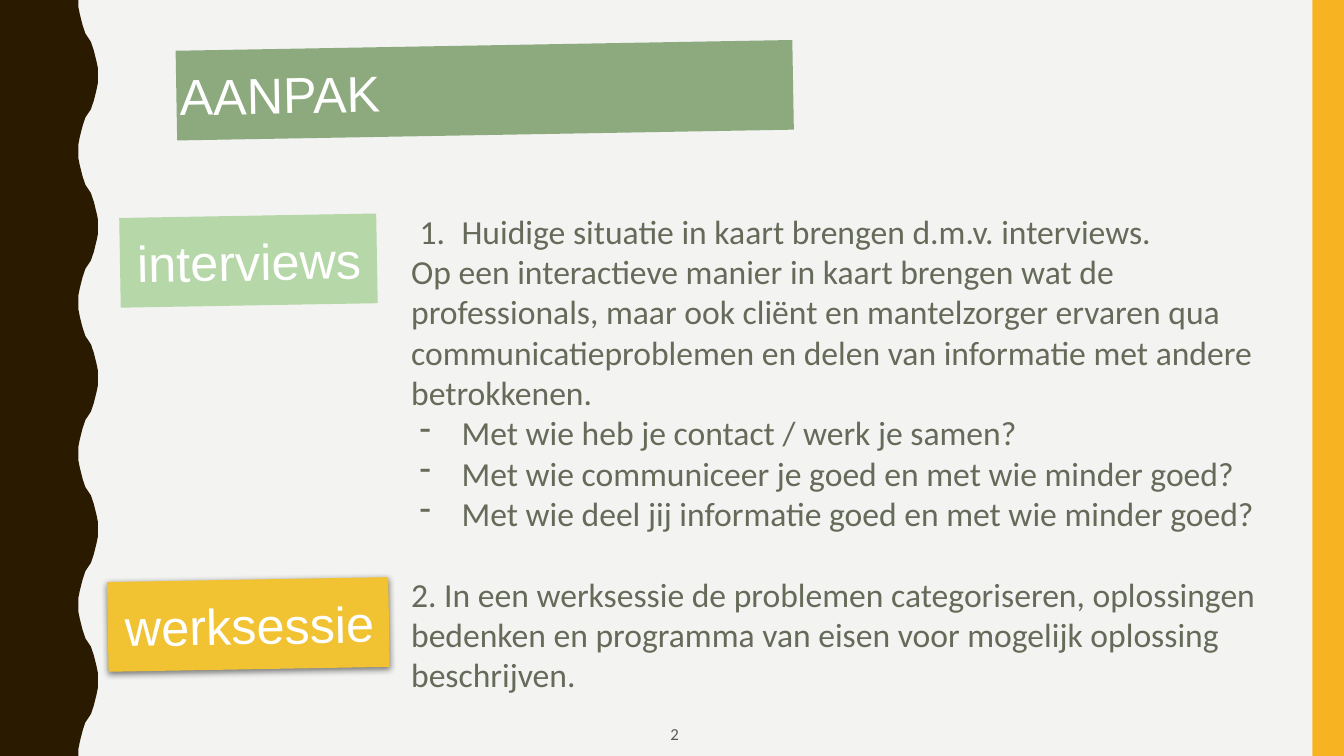
"""Build the AANPAK slide with its interview and work session steps."""
from pptx import Presentation
from pptx.dml.color import RGBColor as Rgb
from pptx.enum.shapes import MSO_SHAPE as Shape
from pptx.enum.text import MSO_ANCHOR as Anchor, PP_ALIGN as Align
from pptx.oxml import parse_xml
from pptx.oxml.ns import nsdecls
from pptx.util import Pt

TITLE = "AANPAK"
PAGE_NUMBER = "2"
STEPS = [
    ("number", "Huidige situatie in kaart brengen d.m.v. interviews."),
    ("plain", "Op een interactieve manier in kaart brengen wat de professionals, maar ook "
              "cliënt en mantelzorger ervaren qua communicatieproblemen en delen van "
              "informatie met andere betrokkenen."),
    ("dash", "Met wie heb je contact / werk je samen?"),
    ("dash", "Met wie communiceer je goed en met wie minder goed?"),
    ("dash", "Met wie deel jij informatie goed en met wie minder goed?"),
    ("section", "2. In een werksessie de problemen categoriseren, oplossingen bedenken en "
                "programma van eisen voor mogelijk oplossing beschrijven."),
]
THEME = {
    "paper": "F3F3F2", "wave": "2A1A00", "edge": "F8B323", "title": "8CAA7E",
    "interviews": "B6D7A8", "werksessie": "F1C232", "label": "FFFFFF",
    "body": "656A59", "number": "595959",
    "label_font": "Arial", "body_font": "Calibri",
    "label_size": 36, "body_size": 24, "number_size": 12,
}
LABELS = [
    (TITLE, "title", (126, 32.4, 440.6, 64.1), False),
    (" interviews", "interviews", (85.7, 154.1, 183.6, 64.1), False),
    (" werksessie", "werksessie", (77, 414, 200.9, 64.1), True),
]
BULLETS = {
    "number": '<a:buAutoNum {} type="arabicPeriod"/>',
    "dash": '<a:buChar {} char="-"/>',
}
SHADOW = ('<a:effectLst {}><a:outerShdw blurRad="57150" dist="19050" dir="5400000" '
          'algn="bl" rotWithShape="0"><a:srgbClr val="000000"><a:alpha val="50000"/>'
          '</a:srgbClr></a:outerShdw></a:effectLst>')
SLIDE_WIDTH, SLIDE_HEIGHT = 960, 540
WAVE_PERIOD, WAVE_COUNT = 108, 5
WAVE_LEFT, WAVE_RIGHT = 56, 70
WAVE_RISE = [(56, 0), (56.3, 5), (57, 10), (57.7, 14.4), (58.6, 18),
             (59.8, 21), (61.3, 24), (63, 27)]


def paint(shape, colour):
    shape.shadow.inherit = False
    shape.fill.solid()
    shape.fill.fore_color.rgb = Rgb.from_string(THEME[colour])
    shape.line.fill.background()


def write(paragraph, words, kind, colour):
    run = paragraph.add_run()
    run.text = words
    run.font.name = THEME["label_font" if kind == "label" else "body_font"]
    run.font.size = Pt(THEME[kind + "_size"])
    run.font.color.rgb = Rgb.from_string(THEME[colour])


def add_wave(slide):
    half = WAVE_RISE + [(WAVE_LEFT + WAVE_RIGHT - x, WAVE_PERIOD / 2 - y)
                        for x, y in WAVE_RISE[-2::-1]]
    period = half + [(x, WAVE_PERIOD - y) for x, y in half[-2::-1]]
    outline = [(x, y + n * WAVE_PERIOD) for n in range(WAVE_COUNT) for x, y in period]
    outline.append((0, SLIDE_HEIGHT))
    builder = slide.shapes.build_freeform(0, 0, scale=Pt(1))
    builder.add_line_segments(outline, close=True)
    paint(builder.convert_to_shape(), "wave")


def add_label(slide, words, colour, box, raised):
    label = slide.shapes.add_shape(Shape.RECTANGLE, *map(Pt, box))
    paint(label, colour)
    label.rotation = 359
    if raised:
        properties = label.element.spPr
        properties.remove(properties.find("{*}effectLst"))
        properties.append(parse_xml(SHADOW.format(nsdecls("a"))))
    frame = label.text_frame
    frame.word_wrap = True
    frame.vertical_anchor = Anchor.MIDDLE
    frame.margin_left = frame.margin_right = Pt(2.2)
    frame.margin_top = frame.margin_bottom = Pt(2.2)
    frame.paragraphs[0].alignment = Align.LEFT
    write(frame.paragraphs[0], words, "label", "label")


def add_steps(slide):
    frame = slide.shapes.add_textbox(*map(Pt, (286.6, 146.9, 649.4, 309.6))).text_frame
    frame.word_wrap = True
    for index, (role, words) in enumerate(STEPS):
        paragraph = frame.paragraphs[0] if index == 0 else frame.add_paragraph()
        if role == "section":
            paragraph.space_before = Pt(28.8)
        if role in BULLETS:
            properties = paragraph._p.get_or_add_pPr()
            properties.set("marL", str(Pt(36)))
            properties.set("indent", str(Pt(-30)))
            properties.append(parse_xml(BULLETS[role].format(nsdecls("a"))))
        write(paragraph, words, "body", "body")


def add_page_number(slide):
    frame = slide.shapes.add_textbox(*map(Pt, (473.8, 514.8, 12.2, 18))).text_frame
    frame.vertical_anchor = Anchor.MIDDLE
    frame.paragraphs[0].alignment = Align.RIGHT
    write(frame.paragraphs[0], PAGE_NUMBER, "number", "number")


def main():
    deck = Presentation()
    deck.slide_width, deck.slide_height = Pt(SLIDE_WIDTH), Pt(SLIDE_HEIGHT)
    slide = deck.slides.add_slide(deck.slide_layouts[6])
    slide.background.fill.solid()
    slide.background.fill.fore_color.rgb = Rgb.from_string(THEME["paper"])
    add_wave(slide)
    edge = slide.shapes.add_shape(Shape.RECTANGLE, Pt(937.5), 0, Pt(22.5), Pt(SLIDE_HEIGHT))
    paint(edge, "edge")
    add_page_number(slide)
    add_steps(slide)
    for label in LABELS:
        add_label(slide, *label)
    deck.save("out.pptx")


if __name__ == "__main__":
    main()
